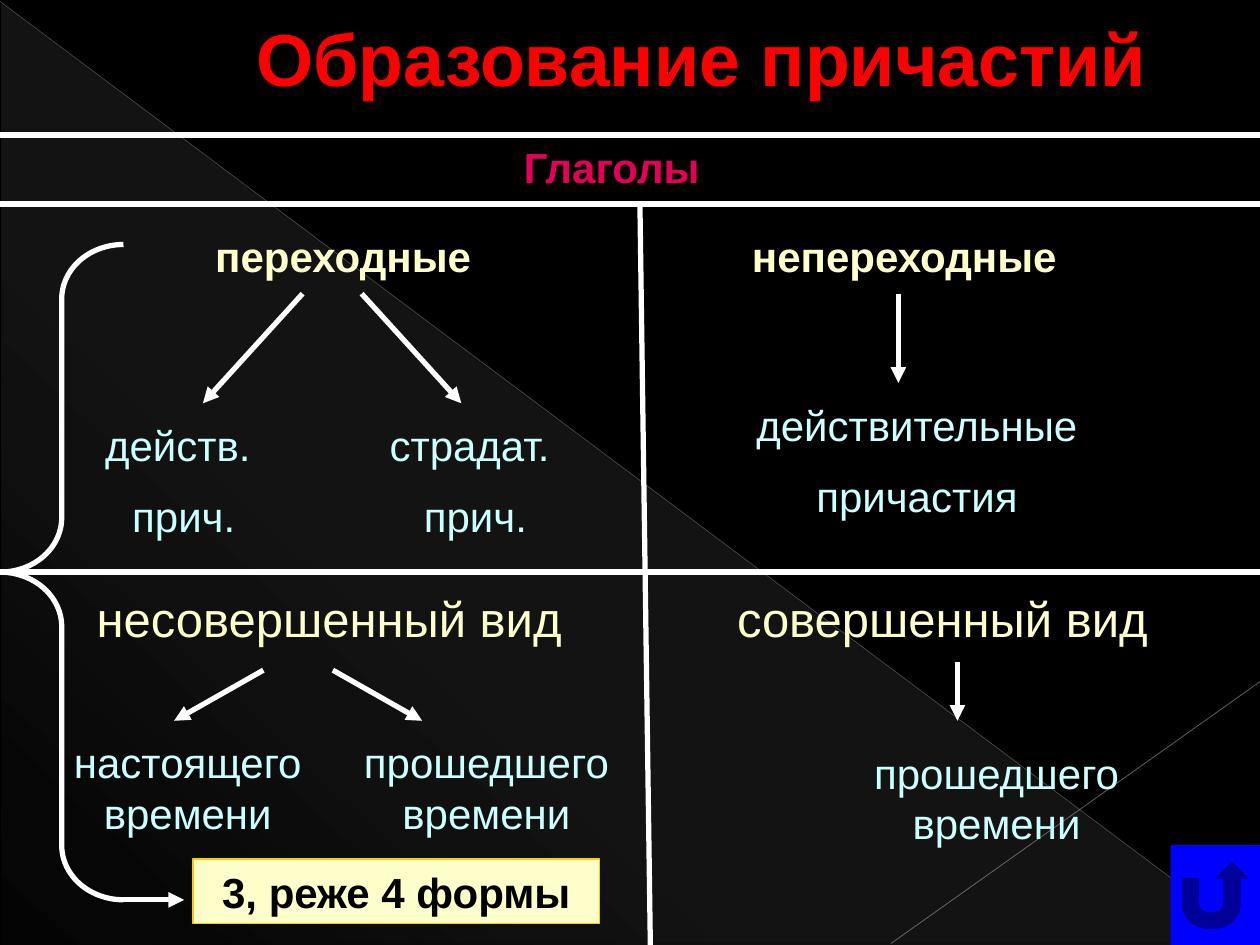
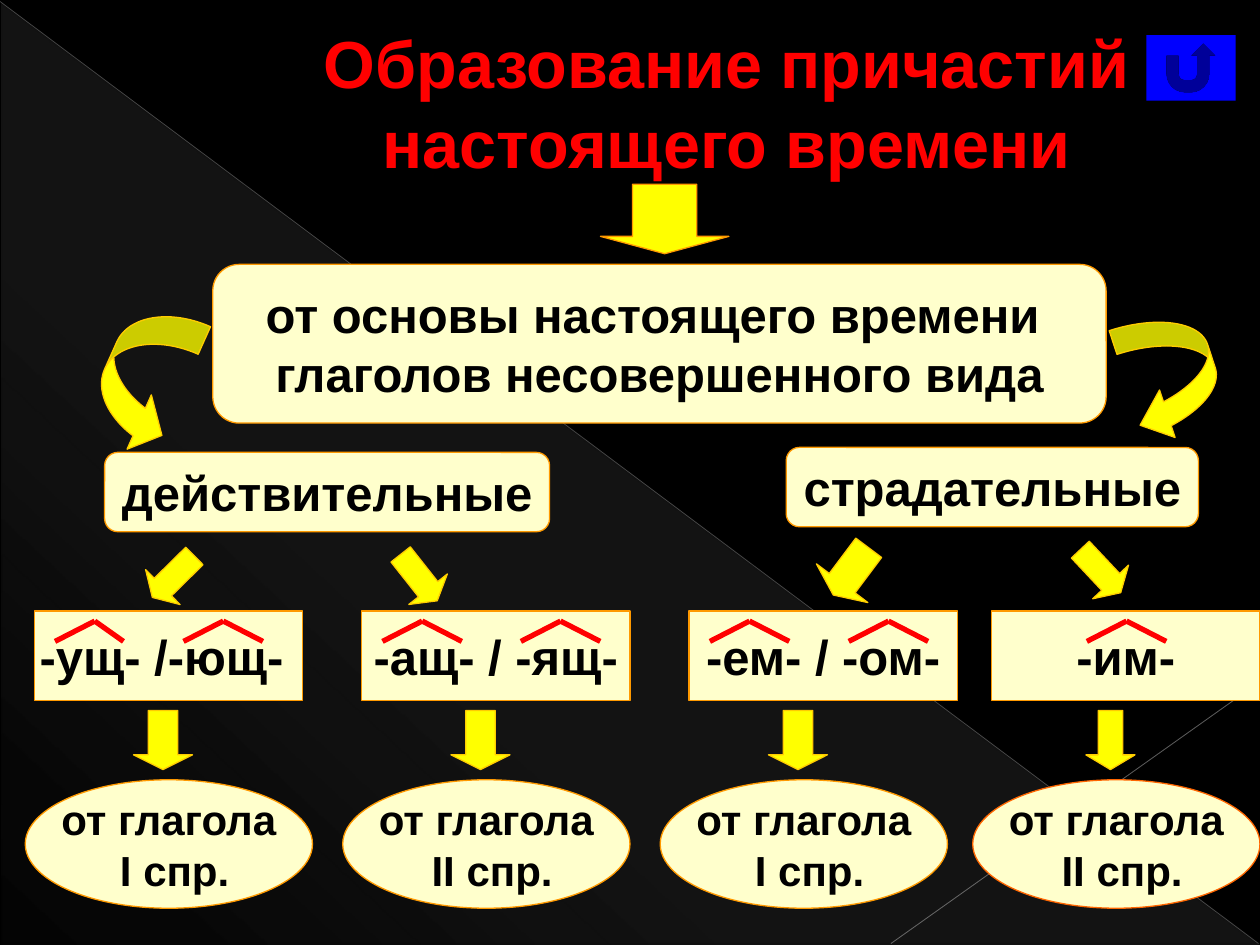
from dataclasses import dataclass

from lxml import etree
from pptx import Presentation
from pptx import util as u
from pptx.dml.color import RGBColor
from pptx.enum import shapes, text
from pptx.oxml import ns

KIND = shapes.MSO_SHAPE
ALIGN = text.PP_ALIGN
ANCHOR = text.MSO_ANCHOR


@dataclass(frozen=True)
class Theme:
    font: str = "Arial"
    background: str = "000000"
    ink: str = "000000"
    white: str = "FFFFFF"
    red: str = "FF0000"
    crimson: str = "E40059"
    cream: str = "FFFFCC"
    ice: str = "CCFFFF"
    yellow: str = "FFFF00"
    gold: str = "FFCC00"
    orange: str = "FF9900"
    ember: str = "FF6600"
    button: str = "0000FF"
    sheen: str = "D2D2D2"
    diagonal: str = "BFBFBF"
    corner: str = "C6C6C6"
    title: int = 42
    long_title: int = 38
    large: int = 28
    body: int = 24
    rule: float = 3
    outline: float = 0.75


def cm(*lengths):
    return [u.Cm(length) for length in lengths]


def sub(parent, tag, **attributes):
    return etree.SubElement(parent, ns.qn(tag), attributes)


class Deck:
    def __init__(self, theme):
        self.theme = theme
        self.prs = Presentation()
        self.prs.slide_width, self.prs.slide_height = cm(25.4, 19.05)
        self.slide = None

    def new_slide(self):
        self.slide = self.prs.slides.add_slide(self.prs.slide_layouts[6])
        fill = self.slide.background.fill
        fill.solid()
        fill.fore_color.rgb = RGBColor.from_string(self.theme.background)
        self.sheen()
        self.line((0, 0.03), (25.37, 19.02), self.theme.diagonal, 0.39, alpha=35)
        self.line((25.4, 13.74), (17.96, 19.02), self.theme.corner, 0.47, alpha=45)

    def sheen(self):
        triangle = self.shape(KIND.RIGHT_TRIANGLE, (0.03, 0.05, 25.37, 19))
        properties = triangle._element.spPr
        properties.remove(properties.find(ns.qn("a:noFill")))
        gradient = etree.Element(ns.qn("a:gradFill"), rotWithShape="1")
        stops = sub(gradient, "a:gsLst")
        for position, alpha in ((0, 10), (70, 8), (100, 1)):
            stop = sub(stops, "a:gs", pos=str(position * 1000))
            color = sub(stop, "a:srgbClr", val=self.theme.sheen)
            sub(color, "a:alpha", val=str(alpha * 1000))
        sub(gradient, "a:lin", ang=str(133 * 60000), scaled="0")
        properties.find(ns.qn("a:prstGeom")).addnext(gradient)

    def line(self, start, end, color=None, width=None, arrow=False, alpha=None):
        connector = self.slide.shapes.add_connector(
            shapes.MSO_CONNECTOR.STRAIGHT, *cm(*start, *end))
        connector.line.color.rgb = RGBColor.from_string(color or self.theme.white)
        connector.line.width = u.Pt(width or self.theme.rule)
        outline = connector._element.spPr.find(ns.qn("a:ln"))
        if alpha:
            sub(outline.find(".//" + ns.qn("a:srgbClr")), "a:alpha", val=str(alpha * 1000))
        if arrow:
            sub(outline, "a:tailEnd", type="triangle")
        sub(connector._element.spPr, "a:effectLst")

    def shape(self, kind, box, fill=None, line=None, width=None, rotation=0, adjust=()):
        figure = self.slide.shapes.add_shape(kind, *cm(*box))
        figure.shadow.inherit = False
        figure.rotation = rotation
        for index, value in enumerate(adjust):
            figure.adjustments[index] = value
        if fill:
            figure.fill.solid()
            figure.fill.fore_color.rgb = RGBColor.from_string(fill)
        else:
            figure.fill.background()
        if line:
            figure.line.color.rgb = RGBColor.from_string(line)
            figure.line.width = u.Pt(width or self.theme.outline)
        else:
            figure.line.fill.background()
        return figure

    def set_text(self, holder, lines, size, color, bold=False, align=ALIGN.CENTER,
                 anchor=ANCHOR.TOP, wrap=True, gap=0):
        frame = holder.text_frame
        frame.word_wrap = wrap
        frame.vertical_anchor = anchor
        for index, words in enumerate(lines):
            paragraph = frame.add_paragraph() if index else frame.paragraphs[0]
            paragraph.text = words
            paragraph.alignment = align
            if index and gap:
                paragraph.space_before = u.Pt(gap)
            font = paragraph.font
            font.name, font.size, font.bold = self.theme.font, u.Pt(size), bold
            font.color.rgb = RGBColor.from_string(color)

    def label(self, box, *lines, size=None, color=None, **style):
        holder = self.slide.shapes.add_textbox(*cm(*box))
        self.set_text(holder, lines, size or self.theme.body, color or self.theme.ice,
                      gap=self.theme.body / 2, **style)

    def title(self, box, words, size, align):
        self.label(box, words, size=size, color=self.theme.red, bold=True,
                   align=align, anchor=ANCHOR.MIDDLE)

    def card(self, kind, box, *lines, size=None, line=None, wrap=False):
        holder = self.shape(kind, box, self.theme.cream, line or self.theme.orange)
        self.set_text(holder, lines, size or self.theme.large, self.theme.ink, bold=True,
                      anchor=ANCHOR.MIDDLE, wrap=wrap)

    def block_arrow(self, kind, box, rotation, adjust, line=None):
        self.shape(kind, box, self.theme.yellow, line or self.theme.gold,
                   rotation=rotation, adjust=adjust)

    def suffix_mark(self, peak, left=0.8, right=0.8):
        for foot in (peak - left, peak + right):
            self.line((peak, 12.52), (foot, 12.93), self.theme.red)

    def return_button(self, box):
        self.shape(KIND.ACTION_BUTTON_RETURN, box, self.theme.button)


def verb_scheme(deck):
    theme = deck.theme
    deck.new_slide()
    deck.title((0.5, 0, 22.86, 2.31), "Образование причастий", theme.title, ALIGN.RIGHT)

    for level in (2.72, 4.11, 11.53):
        deck.line((0, level), (25.4, level))
    deck.line((12.9, 4.11), (13.11, 19.05))

    deck.label((10.31, 2.72, 5.59, 1.27), "Глаголы", color=theme.crimson,
               bold=True, align=ALIGN.LEFT)
    for left, verbs in ((4.09, "переходные"), (14.91, "непереходные")):
        deck.label((left, 4.52, 8.2, 1.27), verbs, color=theme.cream,
                   bold=True, align=ALIGN.LEFT)
    for left, aspect in ((1.7, "несовершенный вид"), (14.61, "совершенный вид")):
        deck.label((left, 11.73, 10.8, 1.45), aspect, size=theme.large,
                   color=theme.cream, align=ALIGN.LEFT)

    deck.label((1.7, 8.33, 4.01, 2.79), "действ. ", "прич.")
    deck.label((7.49, 8.33, 4.19, 2.79), "страдат. ", "прич.")
    deck.label((13.89, 7.92, 9.19, 2.79), "действительные", "причастия")
    deck.label((0.89, 14.73, 5.79, 2.29), "настоящего времени")
    deck.label((6.91, 14.73, 5.79, 2.29), "прошедшего времени")
    deck.label((16.89, 14.94, 6.4, 2.29), "прошедшего времени")

    for start, end in (
        ((6.1, 5.92), (4.09, 8.13)),
        ((7.29, 5.92), (9.3, 8.13)),
        ((18.11, 5.92), (18.11, 7.72)),
        ((5.31, 13.51), (3.51, 14.53)),
        ((6.71, 13.51), (8.51, 14.53)),
        ((19.3, 13.34), (19.3, 14.53)),
        ((2.29, 18.14), (3.71, 18.14)),
    ):
        deck.line(start, end, arrow=True)

    deck.shape(KIND.LEFT_BRACE, (0, 4.93, 2.49, 13.21), line=theme.white,
               width=theme.rule, adjust=(0.44, 0.5))
    deck.card(KIND.RECTANGLE, (3.89, 17.32, 8.2, 1.3), "3, реже 4 формы",
              size=theme.body, line=theme.gold, wrap=True)
    deck.return_button((23.6, 17.04, 1.8, 2.01))


def present_participles(deck):
    theme = deck.theme
    wide_head, long_head = (0.5, 0.25), (0.5, 0.3)
    deck.new_slide()
    deck.title((5.23, 0, 18.85, 4.11), "Образование причастий настоящего времени",
               theme.long_title, ALIGN.CENTER)
    deck.block_arrow(KIND.LEFT_ARROW, (12.7, 3.12, 1.4, 2.59), 270, wide_head, theme.orange)

    deck.card(KIND.ROUNDED_RECTANGLE, (4.29, 5.33, 18.01, 3.2),
              "от основы настоящего времени ", "глаголов несовершенного вида")
    deck.card(KIND.ROUNDED_RECTANGLE, (2.11, 9.12, 8.97, 1.6), "действительные")
    deck.card(KIND.ROUNDED_RECTANGLE, (15.85, 9.02, 8.31, 1.6), "страдательные")
    deck.block_arrow(KIND.CURVED_DOWN_ARROW, (22.35, 6.68, 2.51, 1.8), 71.9,
                     (0.28, 0.56, 0.33))
    deck.block_arrow(KIND.CURVED_UP_ARROW, (1.4, 6.83, 3, 1.6), 114.1,
                     (0.38, 0.75, 0.33))

    for left, top, height, rotation, head in (
        (2.9, 11.13, 0.99, 135.4, long_head),
        (7.85, 11.15, 0.99, 51.7, long_head),
        (16.56, 10.87, 1.3, 126.9, wide_head),
        (21.59, 11.02, 0.99, 46.8, long_head),
    ):
        deck.block_arrow(KIND.RIGHT_ARROW, (left, top, 1.19, height), rotation, head)

    for left, suffixes in ((0.69, "-ущ- /-ющ- "), (7.29, "-ащ- / -ящ-"),
                           (13.89, "-ем- / -ом-"), (19.99, "-им-")):
        deck.card(KIND.RECTANGLE, (left, 12.32, 5.41, 1.8), suffixes)
    deck.suffix_mark(1.91, right=0.58)
    for peak in (4.5, 8.51, 11.3, 15.11, 17.91, 22.71):
        deck.suffix_mark(peak)

    for left, conjugation, height, head, line in (
        (0.51, "I", 1.19, wide_head, theme.orange),
        (6.91, "II", 1.19, wide_head, theme.orange),
        (13.31, "I", 1.19, wide_head, theme.orange),
        (19.61, "II", 0.99, long_head, theme.ember),
    ):
        deck.block_arrow(KIND.RIGHT_ARROW, (left + 2.18, 14.92 - height / 2, 1.19, height),
                         90, head)
        deck.card(KIND.OVAL, (left, 15.72, 5.79, 2.59), "от глагола",
                  f" {conjugation} спр.", size=theme.body, line=line)

    deck.return_button((23.11, 0.71, 1.8, 1.32))


def main():
    deck = Deck(Theme())
    verb_scheme(deck)
    present_participles(deck)
    deck.prs.save("out.pptx")


if __name__ == "__main__":
    main()
